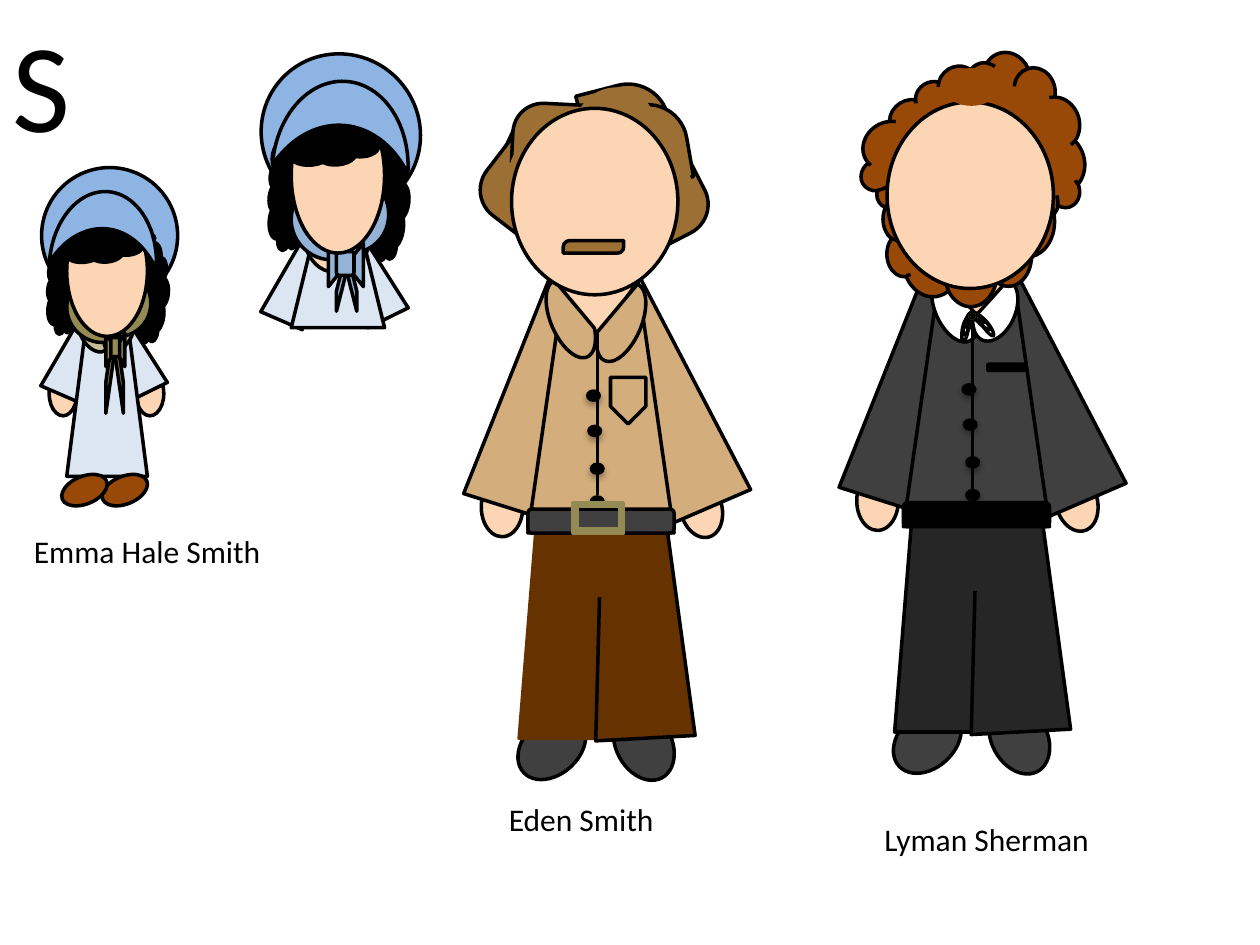
from dataclasses import dataclass
from typing import Any

from lxml import etree
from pptx import Presentation
from pptx import util as u
from pptx.dml.color import RGBColor
from pptx.enum import shapes, text
from pptx.oxml.ns import qn

S = shapes.MSO_SHAPE
BLACK, WHITE, SKIN = "000000", "FFFFFF", "FCD5B5"
BONNET, DRESS, LEATHER = "8EB4E3", "DCE6F2", "984807"
TAN, BROWN_HAIR, CHARCOAL, BRASS = "D3AD7B", "9C6F34", "404040", "948A54"
BONNET_SIDE = 1.08


def rgb(value):
    """Return the colour for a hex string."""
    return RGBColor.from_string(value)


@dataclass
class Figure:
    """A grouped drawing with its origin and scale on the slide."""
    group: Any
    left: float
    top: float
    across: float = 1
    down: float = 1

    def draw(self, kind, at, fill, turn=0, line=BLACK, adj=None, flip=False, width=2):
        """Add one preset shape, scaling its centre and its sides as they lie."""
        x, y, w, h = at
        sideways = 45 <= turn % 180 < 135
        sx, sy = (self.down, self.across) if sideways else (self.across, self.down)
        wide, high = w * sx, h * sy
        left = self.left + (x + w / 2) * self.across - wide / 2
        top = self.top + (y + h / 2) * self.down - high / 2
        shape = self.group.shapes.add_shape(kind, *map(u.Inches, (left, top, wide, high)))
        shape.shadow.inherit = False
        shape.rotation = turn
        shape.fill.solid()
        shape.fill.fore_color.rgb = rgb(fill)
        if line:
            shape.line.color.rgb = rgb(line)
            shape.line.width = u.Pt(width)
        else:
            shape.line.fill.background()
        if adj is not None:
            shape.adjustments[0] = adj
        if flip:
            shape._element.spPr.xfrm.set("flipH", "1")
        return shape


def add_label(slide, box, words, size):
    """Write one line of text in the box."""
    label = slide.shapes.add_textbox(*map(u.Inches, box)).text_frame
    label.word_wrap = True
    label.auto_size = text.MSO_AUTO_SIZE.SHAPE_TO_FIT_TEXT
    run = label.paragraphs[0].add_run()
    run.text = words
    run.font.size, run.font.name = u.Pt(size), "Calibri"
    run.font.color.rgb = rgb(BLACK)


def draw_emma(slide, bonnet, ribbon, collar, dress_length, tails, bow, knot, brim, full_length):
    """Draw the girl around the box that her bonnet fills."""
    left, top, width, height = bonnet
    emma = Figure(slide.shapes.add_group_shape(), left, top,
                  width / BONNET_SIDE, height / BONNET_SIDE)
    emma.draw(S.TEAR, (0, 0, BONNET_SIDE, BONNET_SIDE), BONNET, 135.6)
    for x, y in ((-0.21, 0.78), (0.46, 0.85)):
        emma.draw(S.CLOUD, (x, y, 0.8, 0.29), BLACK, 276.1)
    if full_length:
        for x in (0.75, 0.06):
            emma.draw(S.OVAL, (x, 1.62, 0.22, 0.35), SKIN)
    emma.draw(S.TRAPEZOID, (0.55, 1.11, 0.31, 0.7), DRESS, 333.8)
    emma.draw(S.TRAPEZOID, (0.11, 1.17, 0.31, 0.65), DRESS, 23.4)
    emma.draw(S.TRAPEZOID, (0.2, 1.2, 0.64, dress_length), DRESS)
    if full_length:
        for x in (0.55, 0.23):
            emma.draw(S.OVAL, (x, 2.37, 0.22, 0.38), LEATHER, 67.5)
    emma.draw(S.CHORD, (0.32, 1.17, 0.19, 0.31), collar, 325.4)
    emma.draw(S.CHORD, (0.52, 1.17, 0.19, 0.31), collar, 34.6, flip=True)
    for x, flip in ((0.58, True), (0.51, False)):
        emma.draw(S.DIAGONAL_STRIPE, (x, 1.46, 0.07, tails), ribbon, flip=flip)
    emma.draw(S.MOON, (0.25, 0.95, 0.25, 0.54), ribbon, 313.4, adj=0.33)
    emma.draw(S.MOON, (0.54, 0.89, 0.29, 0.55), ribbon, 226.4, adj=0.33)
    emma.draw(S.FLOWCHART_COLLATE, bow, ribbon, 90)
    emma.draw(S.ROUNDED_RECTANGLE, knot, ribbon)
    emma.draw(S.OVAL, (0.2, 0.3, 0.64, 1.04), SKIN)
    emma.draw(S.CLOUD, (0.1, 0.46, 0.8, 0.29), BLACK, 353.8)
    emma.draw(S.MOON, brim, BONNET, 93.7, adj=0.5)


def soften(button):
    """Give a button a faint shadow below."""
    effects = button._element.spPr.find(qn("a:effectLst"))
    shadow = etree.SubElement(effects, qn("a:outerShdw"), blurRad="44450", dist="27940",
                              dir="5400000", algn="ctr", rotWithShape="0")
    colour = etree.SubElement(shadow, qn("a:srgbClr"), val=BLACK)
    etree.SubElement(colour, qn("a:alpha"), val="32000")


def draw_body(man, shirt, trousers, left_seam, belt):
    """Draw shoes, hands, shirt, trousers, belt and neck of a man."""
    for x, y, turn in ((0.56, 5.02, 47.4), (1.29, 5, 331.7)):
        man.draw(S.OVAL, (x, y, 0.44, 0.61), CHARCOAL, turn)
    for x, y, turn in ((0.22, 3.19, 0), (1.8, 3.2, 344.8)):
        man.draw(S.OVAL, (x, y, 0.33, 0.47), SKIN, turn)
    for x, y, turn in ((1.22, 1.6, 336.7), (0.35, 1.56, 17.5)):
        man.draw(S.TRAPEZOID, (x, y, 0.79, 1.92), shirt, turn, adj=0.18)
    man.draw(S.TRAPEZOID, (0.59, 1.61, 1.16, 2.02), shirt)
    for x, y in ((1.05, 2.49), (1.06, 2.77), (1.08, 3.07), (1.08, 3.33)):
        soften(man.draw(S.OVAL, (x, y, 0.12, 0.1), BLACK, line=None))
    for x, turn, seam in ((0.52, 0, left_seam), (1.08, 356.9, BLACK)):
        man.draw(S.TRAPEZOID, (x, 3.5, 0.79, 1.76), trousers, turn, seam, adj=0.18)
    man.draw(S.OVAL, (0.81, 3.53, 0.73, 0.61), trousers, line=None)
    man.draw(S.ROUNDED_RECTANGLE, (0.59, 3.44, 1.16, 0.19), belt)
    man.draw(S.ISOSCELES_TRIANGLE, (0.69, 1.45, 0.89, 0.67), SKIN, 180)


def draw_collar(man, colour, left_half, right_half):
    """Draw both halves of a collar and the shirt front below it."""
    man.draw(S.CHORD, left_half, colour, 336.9)
    man.draw(S.CHORD, right_half, colour, 23.1, flip=True)
    x, top, bottom = man.left + 1.14, man.top + 2.02, man.top + 3.33
    front = man.group.shapes.add_connector(
        shapes.MSO_CONNECTOR.STRAIGHT, *map(u.Inches, (x, top, x, bottom)))
    front.line.color.rgb = rgb(BLACK)
    front.line.width = u.Pt(1.5)
    etree.SubElement(front._element.spPr, qn("a:effectLst"))


def draw_face(man):
    """Draw the blank face of a man."""
    man.draw(S.OVAL, (0.46, 0.26, 1.32, 1.48), SKIN)


def draw_eden(slide, left, top):
    """Draw Eden from the top left corner of his box."""
    eden = Figure(slide.shapes.add_group_shape(), left, top)
    lock, patch = S.ROUND_2_DIAG_RECTANGLE, S.OVAL
    hair = (
        (lock, (1.04, 0.07, 0.67, 0.65), 345.5, True),
        (lock, (1.27, 0.62, 0.84, 0.51), 62.8, True),
        (patch, (1.31, 0.3, 0.33, 0.45), 52.9, False),
        (lock, (0.46, 0.3, 0.67, 0.48), 24.9, False),
        (lock, (0.19, 0.61, 0.62, 0.51), 307.5, False),
        (patch, (0.57, 0.41, 0.26, 0.43), 317.5, False),
        (lock, (1.2, 0.21, 0.63, 0.68), 80.1, False),
        (lock, (0.47, 0.23, 0.89, 0.48), 2.8, False),
        (patch, (1.17, 0.3, 0.35, 0.43), 12.7, False),
        (patch, (0.97, 0.09, 0.63, 0.64), 63.7, False),
        (patch, (0.53, 0.35, 0.43, 0.64), 63.7, False),
        (patch, (1.37, 0.62, 0.57, 0.45), 63.7, False),
    )
    for kind, at, turn, flip in hair:
        line, adj = (BLACK, 0.5) if kind == lock else (None, None)
        eden.draw(kind, at, BROWN_HAIR, turn, line, adj, flip)
    draw_body(eden, TAN, "663300", "663300", CHARCOAL)
    eden.draw(S.FRAME, (0.95, 3.39, 0.4, 0.24), BRASS, line=BRASS)
    draw_collar(eden, TAN, (0.77, 1.6, 0.32, 0.66), (1.17, 1.63, 0.32, 0.66))
    draw_face(eden)
    eden.draw(lock, (0.87, 1.31, 0.48, 0.1), BROWN_HAIR, adj=0.5)
    eden.draw(S.PENTAGON, (1.2, 2.44, 0.37, 0.28), TAN, 90)


def draw_lyman(slide, left, top):
    """Draw Lyman from the top left corner of his box."""
    lyman = Figure(slide.shapes.add_group_shape(), left, top)
    lyman.draw(S.CLOUD, (0.18, 0.13, 1.36, 0.88), LEATHER, 327.9)
    lyman.draw(S.CLOUD, (0.88, 0.08, 1.36, 0.88), LEATHER, 252.8)
    draw_body(lyman, CHARCOAL, "262626", BLACK, BLACK)
    draw_collar(lyman, WHITE, (0.84, 1.6, 0.32, 0.58), (1.16, 1.65, 0.32, 0.52))
    tie = (
        ((1.22, 1.94, 0.06, 0.2), 144.1, False), ((1.18, 1.9, 0.06, 0.2), 134.9, False),
        ((1.15, 1.9, 0.06, 0.14), 127.5, False), ((1.05, 1.97, 0.06, 0.2), 189.7, True),
        ((1.07, 1.92, 0.06, 0.2), 198.8, True), ((1.08, 1.91, 0.06, 0.15), 206.3, True),
        ((1.1, 1.92, 0.07, 0.08), 83.5, False),
    )
    for at, turn, flip in tie:
        lyman.draw(S.DONUT, at, "6F5305", turn, flip=flip, width=1)
    lyman.draw(S.ROUNDED_RECTANGLE, (1.26, 2.34, 0.29, 0.05), BLACK)
    lyman.draw(S.CLOUD, (0.43, 0.57, 1.36, 1.31), LEATHER)
    draw_face(lyman)
    lyman.draw(S.OVAL, (0.91, -0.01, 0.44, 0.3), LEATHER, line=None)


def main():
    """Build the slide and save it."""
    deck = Presentation()
    deck.slide_width, deck.slide_height = u.Inches(10), u.Inches(7.5)
    slide = deck.slides.add_slide(deck.slide_layouts[6])
    add_label(slide, (0, 0, 0.67, 1.31), "S", 72)
    draw_emma(slide, (0.33, 1.33, 1.08, 1.08), BRASS, "C4BD97", 1.25, 0.49,
              (0.45, 1.37, 0.27, 0.15), (0.55, 1.35, 0.07, 0.15),
              (0.21, 0.06, 0.59, 0.85), True)
    add_label(slide, (0.17, 4.17, 2.75, 0.4), "Emma Hale Smith", 18)
    draw_emma(slide, (2.08, 0.42, 1.25, 1.28), "95B3D7", SKIN, 0.64, 0.27,
              (0.43, 1.3, 0.29, 0.24), (0.51, 1.33, 0.12, 0.16),
              (0.26, 0.02, 0.59, 0.93), False)
    draw_eden(slide, 3.6, 0.6)
    add_label(slide, (3.94, 6.3, 1.96, 0.4), "Eden Smith", 18)
    draw_lyman(slide, 6.58, 0.55)
    add_label(slide, (6.92, 6.46, 1.96, 0.4), "Lyman Sherman", 18)
    deck.save("out.pptx")


if __name__ == "__main__":
    main()
